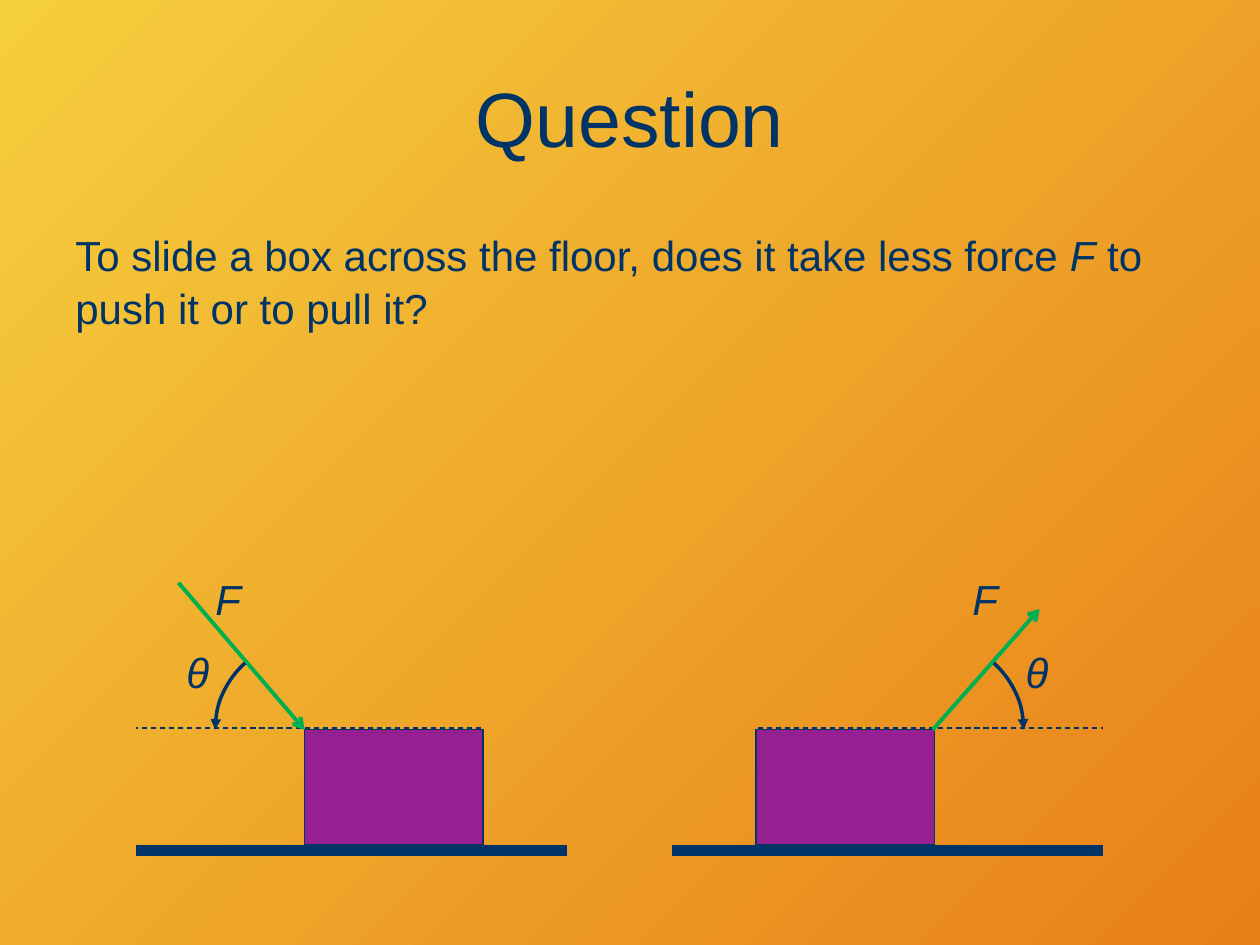
from pptx import Presentation
from pptx.dml.color import RGBColor
from pptx.enum.dml import MSO_LINE_DASH_STYLE as DASH
from pptx.enum.shapes import MSO_CONNECTOR, MSO_SHAPE
from pptx.enum.text import MSO_ANCHOR, MSO_AUTO_SIZE, PP_ALIGN
from pptx.oxml.ns import qn
from pptx.util import Pt
from lxml.etree import SubElement

COLORS = {
    "navy": "003366",
    "box": "942092",
    "force": "00B050",
    "background_start": "F5CE3D",
    "background_end": "E88018",
}
FONT = "Arial"
BOX_TOP, BOX_WIDTH, BOX_HEIGHT = 417, 102, 66
FLOOR_Y, HORIZONTAL_Y = 486, 416
OUTER_REACH = 96  # how far floor and dashed line extend beyond the box corner
ARC_RADIUS = 51
ARC_START = 311.7  # degrees


def color(name):
    return RGBColor.from_string(COLORS[name])


def set_background(slide):
    fill = slide.background.fill
    fill.gradient()
    fill.gradient_angle = 315
    for stop, name, position in zip(
        fill.gradient_stops, ("background_start", "background_end"), (0, 1)
    ):
        stop.color.rgb = color(name)
        stop.position = position


def add_run(paragraph, text, size, italic=False):
    run = paragraph.add_run()
    run.text = text
    run.font.name = FONT
    run.font.size = Pt(size)
    run.font.italic = italic
    run.font.color.rgb = color("navy")


def set_title(slide, text):
    title = slide.shapes.title
    title.left, title.top, title.width, title.height = Pt(36), Pt(21.6), Pt(648), Pt(90)
    title.text_frame.vertical_anchor = MSO_ANCHOR.MIDDLE
    paragraph = title.text_frame.paragraphs[0]
    paragraph.alignment = PP_ALIGN.CENTER
    add_run(paragraph, text, 44)


def add_body(slide, pieces):
    text_box = slide.shapes.add_textbox(Pt(36), Pt(126), Pt(648), Pt(84))
    text_box.text_frame.word_wrap = True
    paragraph = text_box.text_frame.paragraphs[0]
    paragraph.line_spacing = 1.05
    for text, italic in pieces:
        add_run(paragraph, text, 24, italic)


def add_symbol(slide, text, left, top, width):
    text_box = slide.shapes.add_textbox(Pt(left), Pt(top), Pt(width), Pt(36))
    text_box.text_frame.word_wrap = False
    text_box.text_frame.auto_size = MSO_AUTO_SIZE.SHAPE_TO_FIT_TEXT
    add_run(text_box.text_frame.paragraphs[0], text, 24, italic=True)


def style_line(shape, name, width, dash=None, arrowhead=None):
    shape.line.color.rgb = color(name)
    shape.line.width = Pt(width)
    if dash:
        shape.line.dash_style = dash
    if arrowhead:
        outline = shape._element.spPr.find(qn("a:ln"))
        SubElement(outline, qn("a:tailEnd"), type=arrowhead)


def add_line(slide, start, end, name, width, dash=None, arrowhead=None):
    points = [Pt(value) for value in (*start, *end)]
    line = slide.shapes.add_connector(MSO_CONNECTOR.STRAIGHT, *points)
    style_line(line, name, width, dash, arrowhead)
    SubElement(line._element.spPr, qn("a:effectLst"))


def add_box(slide, left):
    box = slide.shapes.add_shape(
        MSO_SHAPE.RECTANGLE, Pt(left), Pt(BOX_TOP), Pt(BOX_WIDTH), Pt(BOX_HEIGHT)
    )
    box.shadow.inherit = False
    box.fill.solid()
    box.fill.fore_color.rgb = color("box")
    style_line(box, "navy", 0.75)


def add_angle_arc(slide, center, mirrored):
    size = Pt(2 * ARC_RADIUS)
    arc = slide.shapes.add_shape(
        MSO_SHAPE.ARC, Pt(center - ARC_RADIUS), Pt(BOX_TOP - ARC_RADIUS), size, size
    )
    arc.adjustments[0] = ARC_START * 60000 / 100000
    arc.adjustments[1] = 0
    arc.shadow.inherit = False
    arc.fill.background()
    style_line(arc, "navy", 2, arrowhead="triangle")
    if mirrored:
        arc._element.spPr.find(qn("a:xfrm")).set("flipH", "1")


def add_scene(slide, corner, outward, force, force_label, angle_label):
    """Draw a box on the floor; outward is -1 or 1, the side the force acts on."""
    outer = corner + outward * OUTER_REACH
    add_line(slide, (outer, FLOOR_Y), (corner - outward * 150, FLOOR_Y), "navy", 6)
    add_line(slide, (corner - outward * 101, HORIZONTAL_Y), (outer, HORIZONTAL_Y),
             "navy", 0.75, dash=DASH.DASH)
    add_box(slide, min(corner, corner - outward * BOX_WIDTH))
    add_line(slide, *force, "force", 2.25, arrowhead="arrow")
    add_symbol(slide, "F", force_label, 324, 28.8)
    add_angle_arc(slide, corner, mirrored=outward < 0)
    add_symbol(slide, "θ", angle_label, 366, 27.4)


def main():
    presentation = Presentation()
    presentation.slide_width, presentation.slide_height = Pt(720), Pt(540)
    slide = presentation.slides.add_slide(presentation.slide_layouts[5])
    set_background(slide)
    set_title(slide, "Question")
    add_body(slide, [
        ("To slide a box across the floor, does it take less force ", False),
        ("F", True),
        (" to push it or to pull it?", False),
    ])
    add_scene(slide, 174, -1, ((102, 333), (174, BOX_TOP)), 116, 99.4)
    add_scene(slide, 534, 1, ((533, BOX_TOP), (594, 348)), 548.6, 579)
    presentation.save("out.pptx")


if __name__ == "__main__":
    main()
